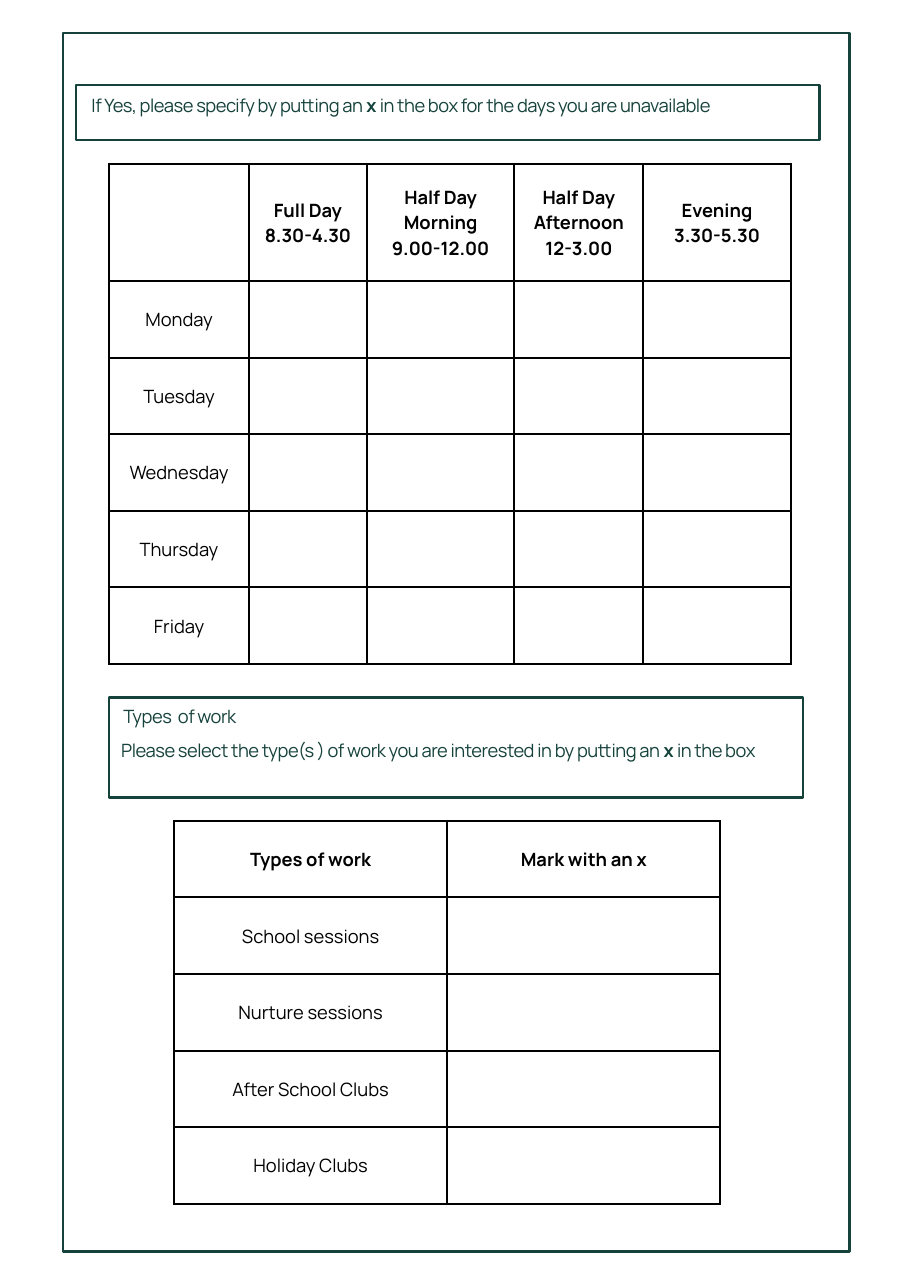
from dataclasses import dataclass

from lxml.etree import SubElement
from pptx import Presentation
from pptx.dml.color import RGBColor
from pptx.enum.shapes import MSO_SHAPE
from pptx.enum.text import MSO_ANCHOR, MSO_AUTO_SIZE, PP_ALIGN
from pptx.oxml.ns import qn
from pptx.util import Inches, Pt

WIDTH, HEIGHT = Inches(8.26), Inches(11.69)
GREEN, BLACK = "16423C", "000000"
FONT, SIZE, LINE = "Manrope", Pt(12), Pt(1.5)
CELL_MARGIN = Inches(0.12)
ROW = 5.95


@dataclass
class Box:
    """Position and size in percent of the slide."""
    left: float
    top: float
    width: float
    height: float

    def emu(self) -> tuple[int, int, int, int]:
        return across(self.left), down(self.top), across(self.width), down(self.height)


@dataclass
class Note:
    """A line of text, with the bold part between asterisks."""
    box: Box
    text: str


@dataclass
class Form:
    """A table to fill in: headings across the top, entries down the first column."""
    left: float
    top: float
    cols: list[float]
    head_row: float
    headings: list[str]
    entries: list[str]


FRAMES = [
    Box(6.9, 2.57, 86.44, 94.61),
    Box(11.99, 54.15, 76.27, 7.78),
    Box(8.35, 6.59, 81.72, 4.28),
]
NOTES = [
    Note(Box(10.05, 7.61, 72.15, 3.08),
         "If Yes, please specify by putting an *x* in the box for the days you are unavailable"),
    Note(Box(13.56, 55, 19.61, 1.63), "Types  of work"),
    Note(Box(13.32, 57.66, 73.49, 3.08),
         "Please select the type(s ) of work you are interested in by putting an *x* in the box"),
]
FORMS = [
    Form(11.99, 12.75, [15.38, 12.95, 16.22, 14.16, 16.22], 9.07,
         ["", "Full Day\n8.30-4.30", "Half Day\nMorning\n9.00-12.00",
          "Half Day\nAfternoon\n12-3.00", "Evening\n3.30-5.30"],
         ["Monday", "Tuesday", "Wednesday", "Thursday", "Friday"]),
    Form(19.13, 63.73, [30.02, 30.02], ROW,
         ["Types of work", "Mark with an x"],
         ["School sessions", "Nurture sessions", "After School Clubs", "Holiday Clubs"]),
]


def across(percent: float) -> int:
    return round(WIDTH * percent / 100)


def down(percent: float) -> int:
    return round(HEIGHT * percent / 100)


def rgb(color: str) -> RGBColor:
    return RGBColor.from_string(color)


def style_run(r, color: str, bold: bool) -> None:
    r.font.name, r.font.size, r.font.bold = FONT, SIZE, bold
    r.font.color.rgb = rgb(color)


def add_frame(s, box: Box) -> None:
    sp = s.shapes.add_shape(MSO_SHAPE.RECTANGLE, *box.emu())
    sp.shadow.inherit = False
    sp.fill.background()
    sp.line.color.rgb = rgb(GREEN)
    sp.line.width = LINE


def add_note(s, note: Note) -> None:
    tf = s.shapes.add_textbox(*note.box.emu()).text_frame
    tf.word_wrap = True
    tf.auto_size = MSO_AUTO_SIZE.SHAPE_TO_FIT_TEXT
    tf.margin_left = tf.margin_top = tf.margin_right = tf.margin_bottom = 0
    p = tf.paragraphs[0]
    p.line_spacing = Pt(12)
    for i, part in enumerate(note.text.split("*")):
        r = p.add_run()
        r.text = part
        style_run(r, GREEN, bold=i % 2 == 1)
        r.font._element.set("spc", "-30")


def add_borders(cell) -> None:
    tcPr = cell._tc.get_or_add_tcPr()
    for side in ("a:lnL", "a:lnR", "a:lnT", "a:lnB"):
        ln = SubElement(tcPr, qn(side), w=str(LINE))
        fill = SubElement(ln, qn("a:solidFill"))
        SubElement(fill, qn("a:srgbClr"), val=BLACK)


def fill_cell(cell, text: str, bold: bool) -> None:
    add_borders(cell)
    cell.fill.background()
    cell.vertical_anchor = MSO_ANCHOR.MIDDLE
    cell.margin_left = cell.margin_right = CELL_MARGIN
    cell.margin_top = cell.margin_bottom = CELL_MARGIN
    cell.text_frame.text = text
    for p in cell.text_frame.paragraphs:
        p.alignment = PP_ALIGN.CENTER
        p.line_spacing = Pt(16.8)
        for r in p.runs:
            style_run(r, BLACK, bold)


def add_form(s, form: Form) -> None:
    blanks = [""] * (len(form.cols) - 1)
    rows = [form.headings] + [[entry] + blanks for entry in form.entries]
    heights = [form.head_row] + [ROW] * len(form.entries)
    box = Box(form.left, form.top, sum(form.cols), sum(heights))
    table = s.shapes.add_table(len(rows), len(form.cols), *box.emu()).table
    table.first_row = table.horz_banding = False
    for col, width in zip(table.columns, form.cols):
        col.width = across(width)
    for i, (row, height) in enumerate(zip(table.rows, heights)):
        row.height = down(height)
        for cell, text in zip(row.cells, rows[i]):
            fill_cell(cell, text, bold=i == 0)


def main() -> None:
    prs = Presentation()
    prs.slide_width, prs.slide_height = WIDTH, HEIGHT
    s = prs.slides.add_slide(prs.slide_layouts[6])
    for frame in FRAMES:
        add_frame(s, frame)
    for form in FORMS:
        add_form(s, form)
    for note in NOTES:
        add_note(s, note)
    prs.save("out.pptx")


if __name__ == "__main__":
    main()
